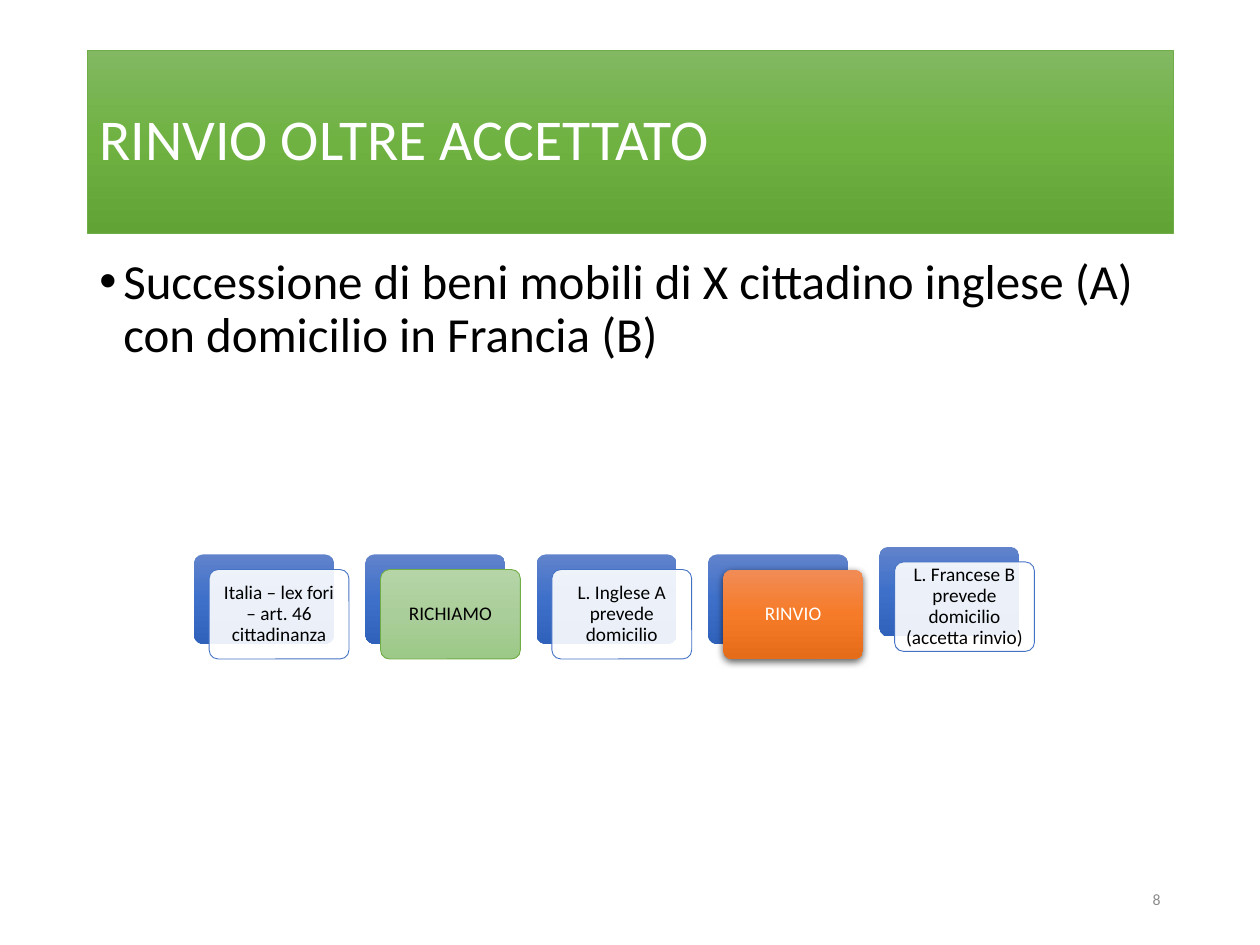
from lxml.etree import SubElement
from pptx import Presentation
from pptx.dml.color import RGBColor
from pptx.enum.shapes import MSO_SHAPE
from pptx.enum.text import MSO_ANCHOR, PP_ALIGN
from pptx.oxml.ns import qn
from pptx.util import Inches, Pt

# Content
TITLE = "RINVIO OLTRE ACCETTATO"
BODY = "Successione di beni mobili di X cittadino inglese (A) con domicilio in Francia (B)"
PAGE = "8"
STEPS = [  # text, card style, top of the back plate
    ("Italia – lex fori – art. 46 cittadinanza", "plain", 4.4),
    ("RICHIAMO", "green", 4.4),
    ("L. Inglese A prevede domicilio", "plain", 4.4),
    ("RINVIO", "orange", 4.4),
    ("L. Francese B prevede domicilio (accetta rinvio)", "plain", 4.34),
]

THEME = {
    "font": "Calibri",
    "size": {"title": 33, "body": 28, "step": 11, "page": 9},
    "white": "FFFFFF", "black": "000000", "grey": "8C8C8C",
    "title": {"fill": ("81B861", "6FB242", "62A336"), "line": "70AD47"},
    "plate": {"fill": ("6183CB", "3E70CA", "3062BB"), "line": None},
    "plain": {"fill": "FFFFFF", "alpha": 90, "line": "4472C4", "text": "000000"},
    "green": {"fill": ("B5D5A7", "AACE9A", "9CC987"), "line": "70AD47", "text": "000000"},
    "orange": {"fill": ("F18C57", "F67B28", "E56C19"), "line": None, "text": "FFFFFF",
               "shadow": True},
}

# Step row geometry
LEFT, PITCH, CARD_W, CARD_H, OFFSET = 1.54, 1.36, 1.11, 0.71, 0.12


def set_gradient(fill, colors):
    fill.gradient()
    fill.gradient_angle = 270  # top to bottom
    stops = fill._fill._gradFill.find(qn("a:gsLst"))
    stops.clear()
    for i, color in enumerate(colors):
        gs = SubElement(stops, qn("a:gs"), pos=str(i * 50000))
        SubElement(gs, qn("a:srgbClr"), val=color)


def add_shadow(sp):
    effects = sp._element.spPr.find(qn("a:effectLst"))
    shadow = SubElement(effects, qn("a:outerShdw"), blurRad=str(Pt(4.5)),
                        dist=str(Pt(1.5)), dir="5400000", rotWithShape="0")
    color = SubElement(shadow, qn("a:srgbClr"), val=THEME["black"])
    SubElement(color, qn("a:alpha"), val="63000")


def add_box(s, kind, box, style):
    sp = s.shapes.add_shape(kind, *map(Inches, box))
    sp.shadow.inherit = False
    if isinstance(style["fill"], tuple):
        set_gradient(sp.fill, style["fill"])
    else:
        sp.fill.solid()
        sp.fill.fore_color.rgb = RGBColor.from_string(style["fill"])
        color = sp._element.spPr.find(qn("a:solidFill"))[0]
        SubElement(color, qn("a:alpha"), val=str(style["alpha"] * 1000))
    if style["line"]:
        sp.line.color.rgb = RGBColor.from_string(style["line"])
        sp.line.width = Pt(0.5)
    else:
        sp.line.fill.background()
    if kind == MSO_SHAPE.ROUNDED_RECTANGLE:
        sp.adjustments[0] = 0.1
    if style.get("shadow"):
        add_shadow(sp)
    return sp


def write(sp, text, size, color, align=PP_ALIGN.LEFT, anchor=MSO_ANCHOR.MIDDLE):
    tf = sp.text_frame
    tf.word_wrap = True
    tf.vertical_anchor = anchor
    p = tf.paragraphs[0]
    p.alignment = align
    p.line_spacing = 0.9
    r = p.add_run()
    r.text = text
    r.font.name = THEME["font"]
    r.font.size = Pt(THEME["size"][size])
    r.font.color.rgb = RGBColor.from_string(color)
    return p


def add_text(s, box, *args, **kwargs):
    return write(s.shapes.add_textbox(*map(Inches, box)), *args, **kwargs)


def add_step(s, x, y, text, style):
    rounded = MSO_SHAPE.ROUNDED_RECTANGLE
    add_box(s, rounded, (x, y, CARD_W, CARD_H), THEME["plate"])
    card = add_box(s, rounded, (x + OFFSET, y + OFFSET, CARD_W, CARD_H), style)
    tf = card.text_frame
    tf.margin_left = tf.margin_right = tf.margin_top = tf.margin_bottom = Inches(0.07)
    write(card, text, "step", style["text"], PP_ALIGN.CENTER)


def main():
    prs = Presentation()
    prs.slide_width, prs.slide_height = Inches(10), Inches(7.5)
    s = prs.slides.add_slide(prs.slide_layouts[6])

    # Title band
    band = add_box(s, MSO_SHAPE.RECTANGLE, (0.69, 0.4, 8.62, 1.45), THEME["title"])
    write(band, TITLE, "title", THEME["white"])

    # Bulleted statement
    p = add_text(s, (0.69, 1.99, 8.81, 1.33), BODY, "body", THEME["black"],
                 anchor=MSO_ANCHOR.TOP)
    p.space_before = Pt(7.5)
    pPr = p._p.get_or_add_pPr()
    pPr.set("marL", str(Inches(0.19)))
    pPr.set("indent", str(-Inches(0.19)))
    SubElement(pPr, qn("a:buFont"), typeface="Arial")
    SubElement(pPr, qn("a:buChar"), char="•")

    # Chain of steps
    for i, (text, style, top) in enumerate(STEPS):
        add_step(s, LEFT + i * PITCH, top, text, THEME[style])

    # Page number
    add_text(s, (7.06, 6.95, 2.25, 0.4), PAGE, "page", THEME["grey"], PP_ALIGN.RIGHT)

    prs.save("out.pptx")


if __name__ == "__main__":
    main()
